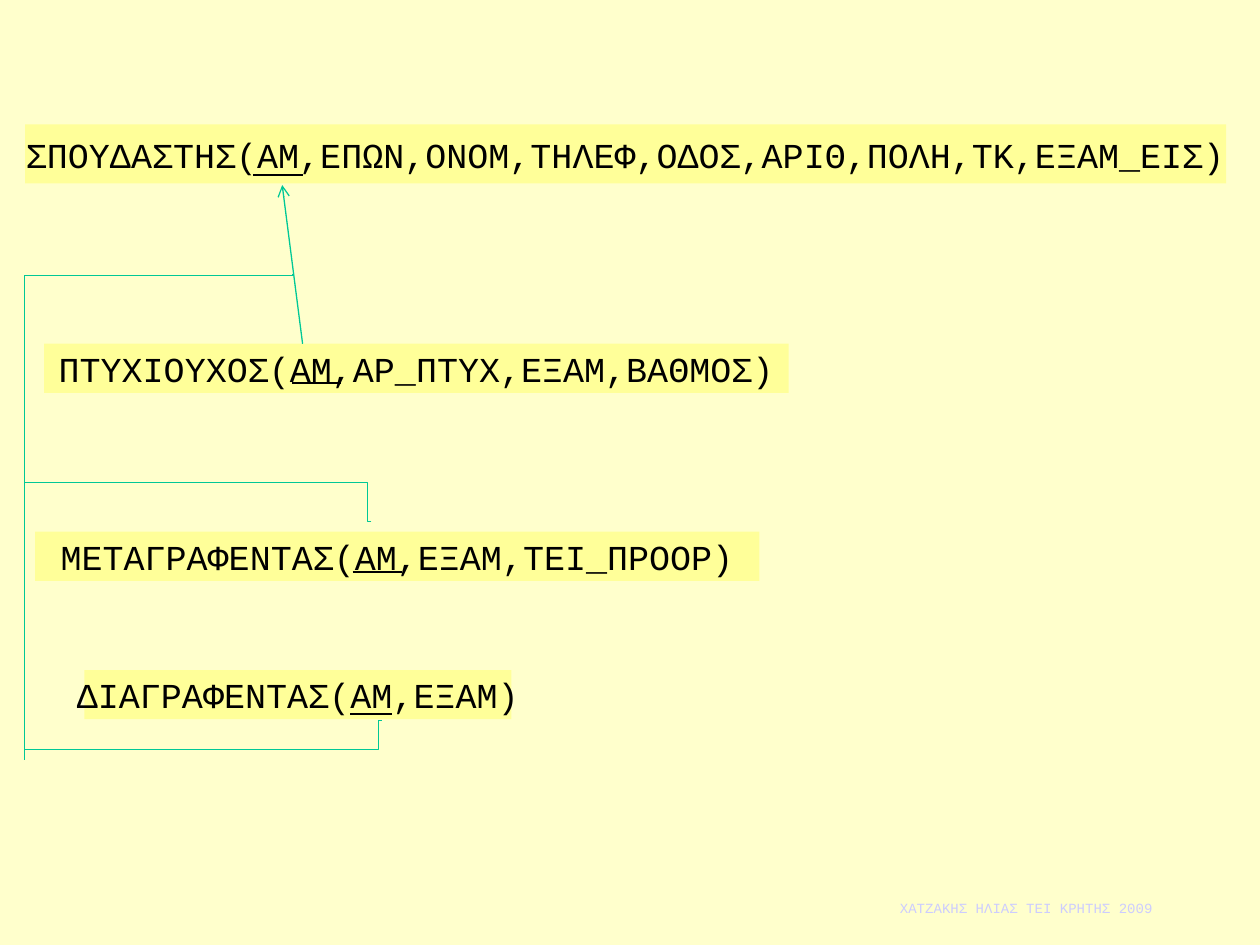
from dataclasses import dataclass

from lxml import etree
from pptx import Presentation
from pptx.dml.color import RGBColor
from pptx.enum import shapes, text
from pptx.oxml import ns
from pptx.util import Cm, Pt


@dataclass(frozen=True)
class Theme:
    """Colours, font and sizes of the slide."""
    page: RGBColor = RGBColor(0xFF, 0xFF, 0xCC)
    band: RGBColor = RGBColor(0xFF, 0xFF, 0x99)
    ink: RGBColor = RGBColor(0, 0, 0)
    link: RGBColor = RGBColor(0x00, 0xC8, 0x96)
    credit: RGBColor = RGBColor(0xCC, 0xCC, 0xFF)
    font: str = "Courier New"
    relation_size: int = 20
    credit_size: int = 8
    line_width: float = 0.75


THEME = Theme()
KEY = "ΑΜ"
KEY_WIDTH = 0.99

RELATIONS = [
    ("ΜΕΤΑΓΡΑΦΕΝΤΑΣ", "ΕΞΑΜ,ΤΕΙ_ΠΡΟΟΡ", (0.71, 10.72, 14.6, 0.99), (6.4, 0.81)),
    ("ΔΙΑΓΡΑΦΕΝΤΑΣ", "ΕΞΑΜ", (1.7, 13.51, 8.61, 0.99), None),
    ("ΣΠΟΥΔΑΣΤΗΣ", "ΕΠΩΝ,ΟΝΟΜ,ΤΗΛΕΦ,ΟΔΟΣ,ΑΡΙΘ,ΠΟΛΗ,ΤΚ,ΕΞΑΜ_ΕΙΣ",
     (0.51, 2.51, 24.21, 1.19), (4.6, 1.02)),
    ("ΠΤΥΧΙΟΥΧΟΣ", "ΑΡ_ΠΤΥΧ,ΕΞΑΜ,ΒΑΘΜΟΣ", (0.89, 6.93, 15.01, 0.99), (5.0, 0.79)),
]


def style_text(para, size, color):
    """Centre a paragraph and format its runs."""
    para.alignment = text.PP_ALIGN.CENTER
    for span in para.runs:
        span.font.name = THEME.font
        span.font.size = Pt(size)
        span.font.color.rgb = color


def add_line(page, start, end, color, kind=shapes.MSO_CONNECTOR.STRAIGHT):
    """Draw a flat connector between two points in centimetres."""
    line = page.shapes.add_connector(kind, *map(Cm, (*start, *end)))
    line.line.color.rgb = color
    line.line.width = Pt(THEME.line_width)
    etree.SubElement(line._element.spPr, ns.qn("a:effectLst"))
    return line


def add_elbow(page, start, end, bend, turn=0):
    """Draw an elbow that bends at a share of its length, turned by degrees."""
    line = add_line(page, start, end, THEME.link, shapes.MSO_CONNECTOR.ELBOW)
    properties = line._element.spPr
    guides = properties.find(ns.qn("a:prstGeom")).find(ns.qn("a:avLst"))
    etree.SubElement(guides, ns.qn("a:gd"), name="adj1", fmla=f"val {round(bend * 100000)}")
    if turn:
        properties.find(ns.qn("a:xfrm")).set("rot", str(turn * 60000))


def add_relation(page, name, fields, area, key_line):
    """Place a relation band and underline its key."""
    box = page.shapes.add_shape(shapes.MSO_SHAPE.RECTANGLE, *map(Cm, area))
    box.shadow.inherit = False
    box.fill.solid()
    box.fill.fore_color.rgb = THEME.band
    box.line.fill.background()
    frame = box.text_frame
    frame.word_wrap = False
    frame.vertical_anchor = text.MSO_ANCHOR.MIDDLE
    para = frame.paragraphs[0]
    if key_line:
        para.text = f"{name}({KEY},{fields})"
        left, top = area[0] + key_line[0], area[1] + key_line[1]
        add_line(page, (left, top), (left + KEY_WIDTH, top), THEME.ink)
    else:
        for part in (f"{name}(", KEY, f",{fields})"):
            span = para.add_run()
            span.text = part
            span.font.underline = part == KEY
    style_text(para, THEME.relation_size, THEME.ink)


def add_links(page, left, top):
    """Draw the key references from the top left corner of their region."""
    arrow = add_line(page, (left + 5.59, top + 3.2), (left + 5.18, top), THEME.link)
    etree.SubElement(arrow.line._get_or_add_ln(), ns.qn("a:tailEnd"), type="arrow")
    add_elbow(page, (left - 2.21, top + 3.99), (left + 7.59, top + 9.4), 0.003, turn=90)
    add_elbow(page, (left + 6.98, top + 6.79), (left, top + 6.0), 0.011)
    add_elbow(page, (left + 7.19, top + 10.8), (left, top + 11.38), 0.01)


def add_credit(page, area):
    """Place the author line."""
    box = page.shapes.add_textbox(*map(Cm, area))
    frame = box.text_frame
    frame.word_wrap = True
    frame.auto_size = text.MSO_AUTO_SIZE.SHAPE_TO_FIT_TEXT
    frame.margin_left = frame.margin_right = frame.margin_top = frame.margin_bottom = 0
    frame.text = "ΧΑΤΖΑΚΗΣ ΗΛΙΑΣ ΤΕΙ ΚΡΗΤΗΣ 2009"
    style_text(frame.paragraphs[0], THEME.credit_size, THEME.credit)


def main():
    """Build the slide of relations and save it."""
    deck = Presentation()
    deck.slide_width, deck.slide_height = Cm(25.4), Cm(19.05)
    page = deck.slides.add_slide(deck.slide_layouts[6])
    page.background.fill.solid()
    page.background.fill.fore_color.rgb = THEME.page
    for relation in RELATIONS:
        add_relation(page, *relation)
    add_links(page, 0.51, 3.73)
    add_credit(page, (17.09, 18.14, 7.21, 0.33))
    deck.save("out.pptx")


if __name__ == "__main__":
    main()
